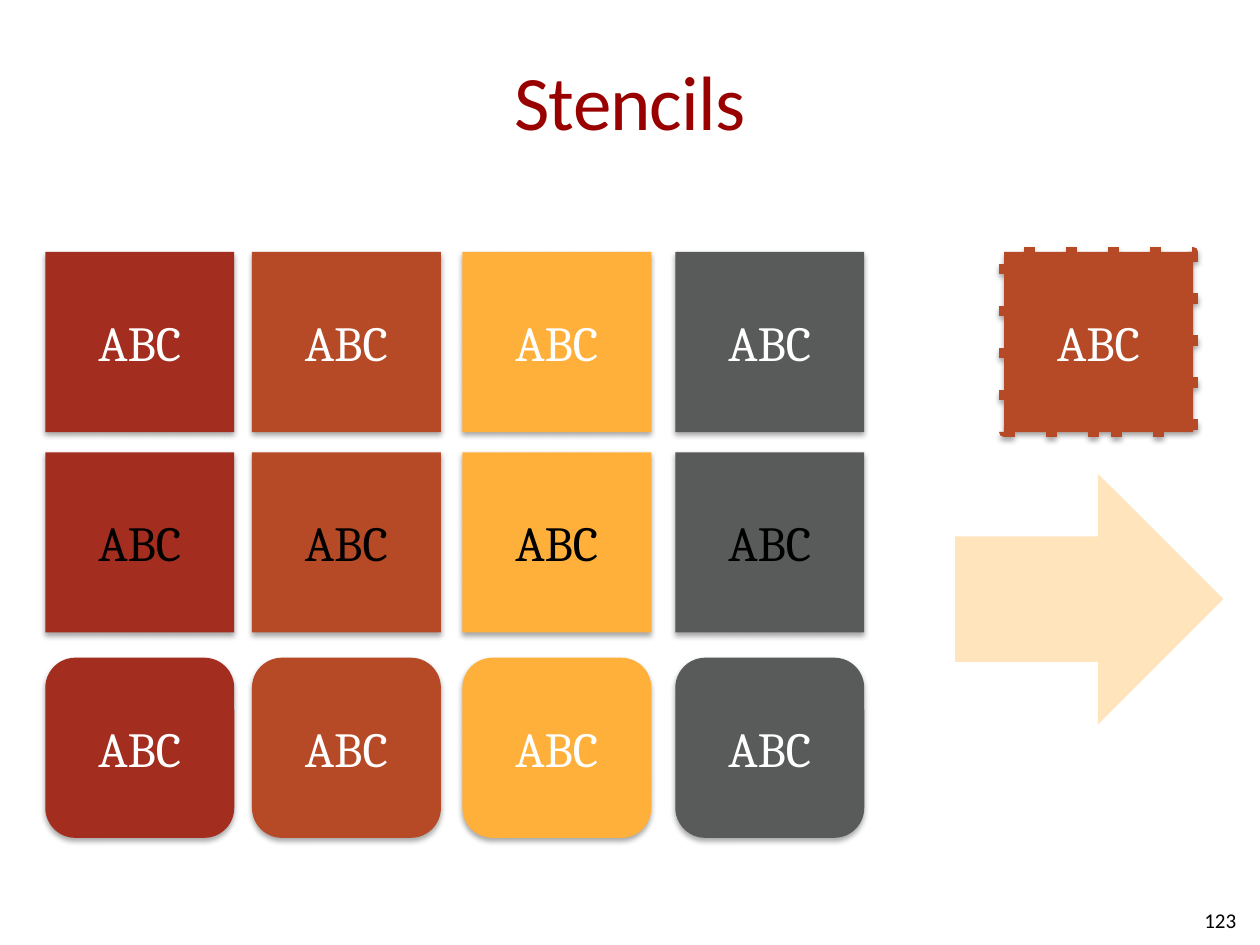
from dataclasses import dataclass

from lxml import etree
from pptx import Presentation
from pptx import util as u
from pptx.dml import color
from pptx.enum import shapes, text
from pptx.oxml import ns


@dataclass(frozen=True)
class Theme:
    red: str = "A32D1E"
    rust: str = "B64926"
    gold: str = "FFB03B"
    gray: str = "595A5A"
    white: str = "FFFFFF"
    black: str = "000000"
    title: str = "990000"
    head: str = "Calibri"
    body: str = "Cambria"
    big: int = 44
    mid: int = 28
    small: int = 12


THEME = Theme()
KIND = shapes.MSO_SHAPE
ALIGN = text.PP_ALIGN
TILE = (1.5, 1.43)


def rgb(code):
    return color.RGBColor.from_string(code)


def child(parent, tag, **attrs):
    return etree.SubElement(parent, ns.qn(tag), **attrs)


def write(frame, words, font, size, code, align):
    frame.word_wrap = True
    frame.vertical_anchor = text.MSO_ANCHOR.MIDDLE
    para = frame.paragraphs[0]
    para.text = words
    para.alignment = align
    para.font.name = font
    para.font.size = u.Pt(size)
    para.font.color.rgb = rgb(code)
    return para


def place(shape, left, top, width, height):
    shape.left, shape.top = u.Inches(left), u.Inches(top)
    shape.width, shape.height = u.Inches(width), u.Inches(height)


def add_title(slide, words):
    title = slide.shapes.title
    place(title, 0.5, 0.17, 9, 1.25)
    frame = title.text_frame
    frame.margin_left = frame.margin_right = 0
    para = write(frame, words, THEME.head, THEME.big, THEME.title, ALIGN.CENTER)
    para.runs[0]._r.get_or_add_rPr().set("spc", "-50")


def add_number(slide, words):
    box = slide.shapes.add_textbox(*map(u.Inches, (7.58, 7.1, 2.33, 0.4)))
    write(box.text_frame, words, THEME.head, THEME.small, THEME.black, ALIGN.RIGHT)


def add_block(slide, kind, left, top, width, height, fill):
    block = slide.shapes.add_shape(kind, *map(u.Inches, (left, top, width, height)))
    block.shadow.inherit = False
    block.fill.solid()
    block.fill.fore_color.rgb = rgb(fill)
    block.line.fill.background()
    return block


def add_shade(shape):
    effects = shape._element.spPr.find(ns.qn("a:effectLst"))
    shade = child(effects, "a:outerShdw", blurRad="40000", dist="23000",
                  dir="5400000", rotWithShape="0")
    child(child(shade, "a:srgbClr", val=THEME.black), "a:alpha", val="35000")


def add_tile(slide, kind, left, top, fill, ink):
    tile = add_block(slide, kind, left, top, *TILE, fill)
    add_shade(tile)
    write(tile.text_frame, "ABC", THEME.body, THEME.mid, ink, ALIGN.CENTER)
    return tile


def add_dots(shape, code, width):
    shape.line.color.rgb = rgb(code)
    shape.line.width = u.Pt(width)
    child(shape._element.spPr.find(ns.qn("a:ln")), "a:prstDash", val="dot")


def add_arrow(slide):
    arrow = add_block(slide, KIND.RIGHT_ARROW, 7.58, 3.76, 2.13, 1.99, THEME.gold)
    tint = arrow._element.spPr.find(ns.qn("a:solidFill"))[0]
    child(tint, "a:alpha", val="34000")


def main():
    deck = Presentation()
    deck.slide_width, deck.slide_height = u.Inches(10), u.Inches(7.5)
    slide = deck.slides.add_slide(deck.slide_layouts[5])
    add_title(slide, "Stencils")
    add_number(slide, "123")

    cols = ((0.36, THEME.red), (2, THEME.rust), (3.67, THEME.gold), (5.36, THEME.gray))
    rows = ((2, KIND.RECTANGLE, THEME.white),
            (3.59, KIND.RECTANGLE, THEME.black),
            (5.22, KIND.ROUNDED_RECTANGLE, THEME.white))
    for top, kind, ink in rows:
        for left, fill in cols:
            add_tile(slide, kind, left, top, fill, ink)

    dotted = add_tile(slide, KIND.RECTANGLE, 7.97, 2, THEME.rust, THEME.white)
    add_dots(dotted, THEME.rust, 6)
    add_arrow(slide)
    deck.save("out.pptx")


if __name__ == "__main__":
    main()
